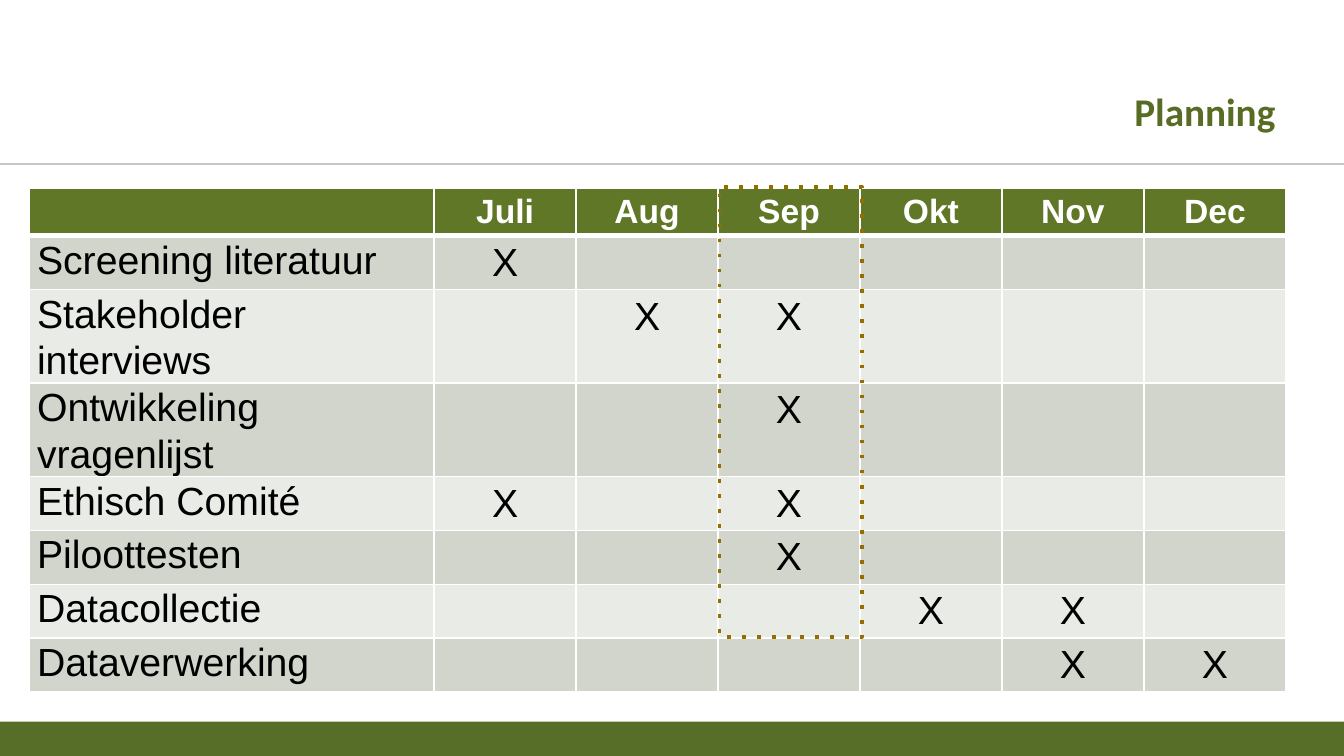
from lxml import etree
from pptx import Presentation, util as u
from pptx.dml.color import RGBColor
from pptx.enum import dml, shapes, text
from pptx.oxml.ns import qn

WHITE = RGBColor(0xFF, 0xFF, 0xFF)
BLACK = RGBColor(0, 0, 0)
GREEN = RGBColor(0x54, 0x6C, 0x24)
TITLE = RGBColor(0x58, 0x6C, 0x24)
HEAD = RGBColor(0x60, 0x77, 0x27)
BANDS = [RGBColor(0xD1, 0xD5, 0xCB), RGBColor(0xE9, 0xEB, 0xE7)]
GREY = RGBColor(0xC6, 0xC6, 0xC6)
GOLD = RGBColor(0x96, 0x6E, 0x00)

MONTHS = ["Juli", "Aug", "Sep", "Okt", "Nov", "Dec"]
TASKS = {
    "Screening literatuur": ["Juli"],
    "Stakeholder interviews": ["Aug", "Sep"],
    "Ontwikkeling vragenlijst": ["Sep"],
    "Ethisch Comité": ["Juli", "Sep"],
    "Piloottesten": ["Sep"],
    "Datacollectie": ["Okt", "Nov"],
    "Dataverwerking": ["Nov", "Dec"],
}
LEFT, TOP, WIDE, FIRST, ROW = 0.22, 1.4, 9.35, 3.01, 0.3
COL = (WIDE - FIRST) / len(MONTHS)


def write(frame, words, size, color, bold, align, face="Arial"):
    para = frame.paragraphs[0]
    para.alignment = align
    run = para.add_run()
    run.text = words
    font = run.font
    font.name, font.size, font.bold = face, u.Pt(size), bold
    font.color.rgb = color
    return para


def edge(cell, side, width):
    props = cell._tc.get_or_add_tcPr()
    line = etree.SubElement(props, qn("a:ln" + side), w=str(u.Pt(width)))
    fill = etree.SubElement(line, qn("a:solidFill"))
    etree.SubElement(fill, qn("a:srgbClr"), val=str(WHITE))


# Slide in 16:9
deck = Presentation()
deck.slide_width = u.Inches(10)
deck.slide_height = deck.slide_width * 9 // 16
slide = deck.slides.add_slide(deck.slide_layouts[5])

# Footer band
band = slide.shapes.add_shape(shapes.MSO_SHAPE.RECTANGLE, 0, u.Inches(5.37),
                              deck.slide_width, u.Inches(0.27))
band.shadow.inherit = False
band.fill.solid()
band.fill.fore_color.rgb = GREEN
band.line.fill.background()
tint = band._element.spPr.find(".//" + qn("a:srgbClr"))
etree.SubElement(tint, qn("a:alpha"), val="98000")

# Rule under the title
rule = slide.shapes.add_connector(shapes.MSO_CONNECTOR.STRAIGHT, 0, u.Inches(1.22),
                                  deck.slide_width, u.Inches(1.22))
rule.line.color.rgb = GREY
rule.line.width = u.Pt(0.75)
etree.SubElement(rule._element.spPr, qn("a:effectLst"))

# Title
title = slide.shapes.title
title.left, title.top = u.Inches(2.87), 0
title.width, title.height = u.Inches(6.69), u.Inches(1.04)
frame = title.text_frame
frame.vertical_anchor = text.MSO_ANCHOR.BOTTOM
frame.margin_left = frame.margin_right = u.Inches(0.07)
frame.margin_top = frame.margin_bottom = u.Inches(0.04)
write(frame, "Planning", 21, TITLE, True, text.PP_ALIGN.RIGHT, "Calibri")

# Planning table
rows = [[""] + MONTHS]
for task, busy in TASKS.items():
    rows.append([task] + ["X" if month in busy else "" for month in MONTHS])
table = slide.shapes.add_table(len(rows), len(rows[0]), u.Inches(LEFT), u.Inches(TOP),
                               u.Inches(WIDE), u.Inches(ROW * len(rows))).table
table.first_row = table.horz_banding = False
for c, col in enumerate(table.columns):
    col.width = u.Inches(COL if c else FIRST)

for r, row in enumerate(rows):
    table.rows[r].height = u.Inches(ROW)
    for c, words in enumerate(row):
        cell = table.cell(r, c)
        label = r > 0 and c == 0
        for side in "LRTB":
            thick = (r, side) in [(0, "B"), (1, "T")]
            edge(cell, side, 3 if thick else 1)
        cell.fill.solid()
        cell.fill.fore_color.rgb = BANDS[(r - 1) % 2] if r else HEAD
        cell.margin_left = cell.margin_right = u.Pt(4 if label else 5.4)
        cell.margin_top = cell.margin_bottom = u.Pt(0 if label else 2.7)
        cell.vertical_anchor = text.MSO_ANCHOR.TOP if r else text.MSO_ANCHOR.MIDDLE
        if words:
            align = text.PP_ALIGN.LEFT if label else text.PP_ALIGN.CENTER
            para = write(cell.text_frame, words, 21 if r else 18,
                         BLACK if r else WHITE, r == 0, align)
            if label:
                para.line_spacing = 1.07
        else:
            # Small type keeps empty cells from stretching the row
            para = cell.text_frame.paragraphs[0]
            etree.SubElement(para._p, qn("a:endParaRPr"), sz="1400")

# Dotted frame around September
mark = slide.shapes.add_shape(
    shapes.MSO_SHAPE.RECTANGLE, u.Inches(LEFT + FIRST + COL * MONTHS.index("Sep") + 0.01),
    u.Inches(1.39), u.Inches(1.06), u.Inches(3.35))
mark.shadow.inherit = False
mark.fill.background()
mark.line.color.rgb = GOLD
mark.line.width = u.Pt(2)
mark.line.dash_style = dml.MSO_LINE.ROUND_DOT
mark._element.spPr.find(".//" + qn("a:prstDash")).set("val", "dot")

deck.save("out.pptx")
